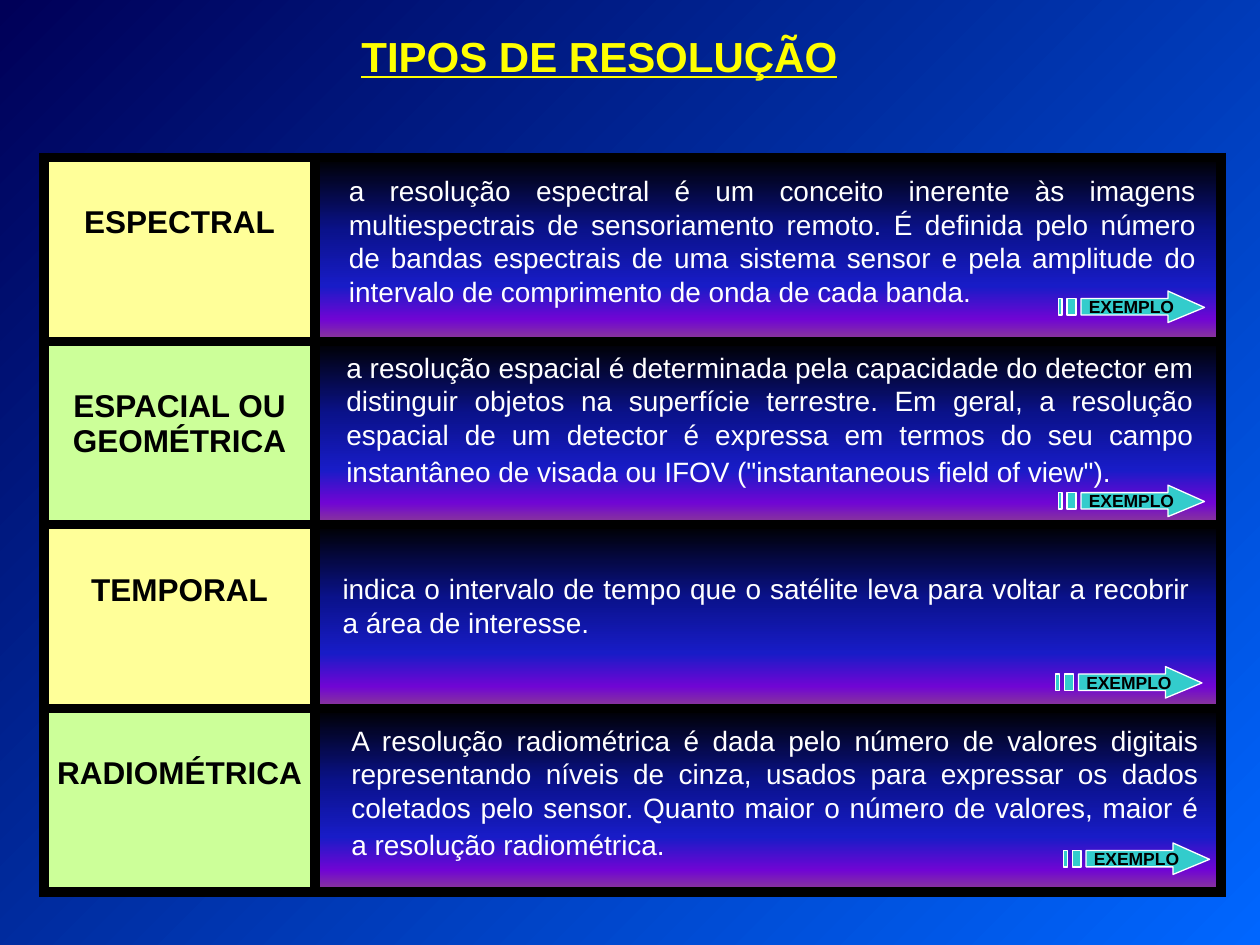
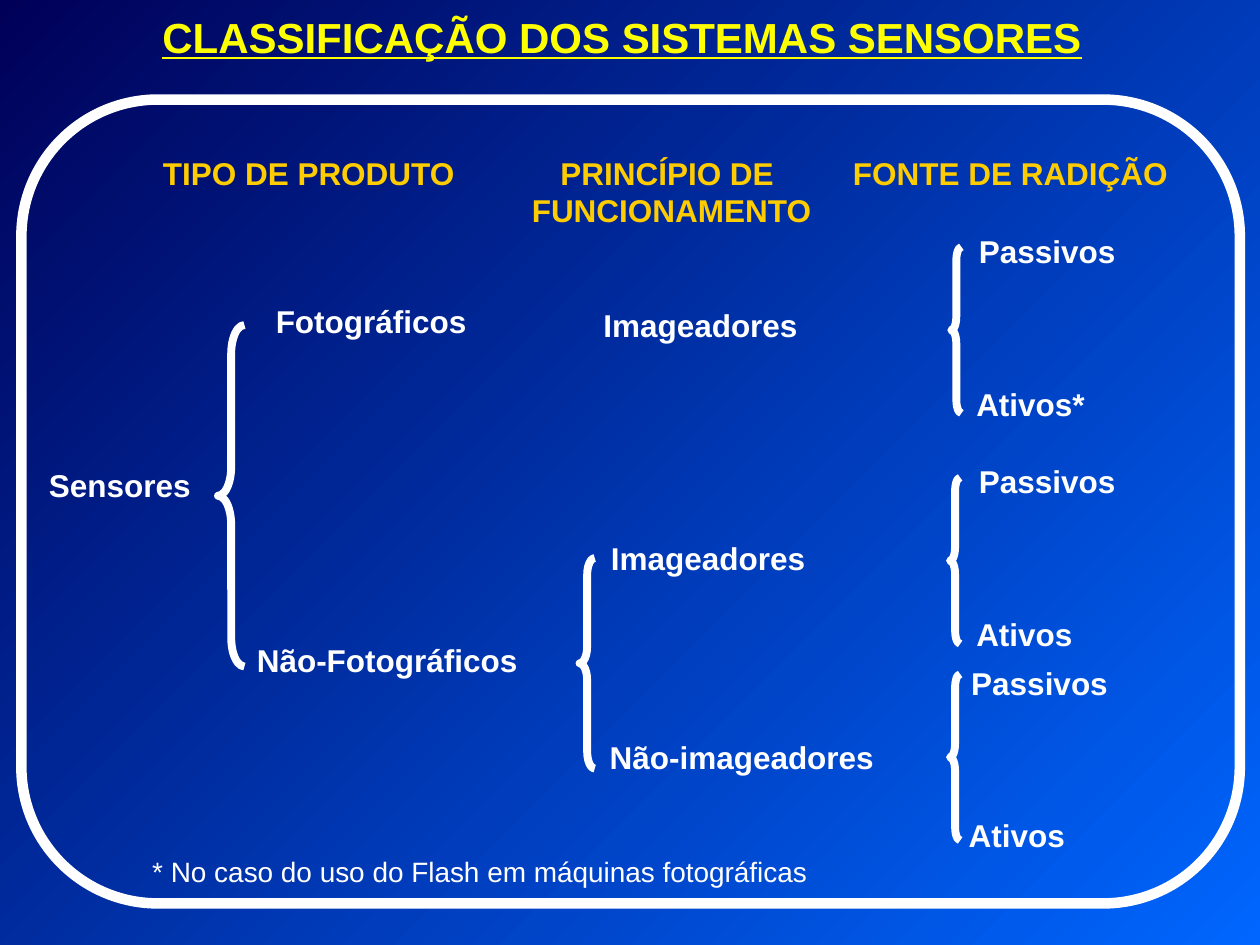
from lxml.etree import SubElement
from pptx import Presentation
from pptx.dml.color import RGBColor
from pptx.enum.shapes import MSO_SHAPE
from pptx.enum.text import MSO_ANCHOR, MSO_AUTO_SIZE, PP_ALIGN
from pptx.oxml.ns import qn
from pptx.util import Inches, Pt

# Shared look
COLORS = {
    "title": "FFFF00", "head": "FFCC00", "white": "FFFFFF", "black": "000000",
    "arrow": "33CCCC", "yellow": "FFFF99", "green": "CCFF99",
}
BACK = [(0, "000058"), (100, "0066FF")]
GLOW = [(0, "000000"), (40, "0A128C"), (70, "181CC7"), (88, "7005D4"), (100, "8C3D91")]
FONT = "Arial"

# Resolution types: label, label fill, text, text position, arrow position, tall last line
TYPES = [
    ("ESPECTRAL", "yellow",
     "a resolução espectral é um conceito inerente às imagens multiespectrais de "
     "sensoriamento remoto. É definida pelo número de bandas espectrais de uma sistema "
     "sensor e pela amplitude do intervalo de comprimento de onda de cada banda.",
     (2.67, 1.33, 1.17), (8.4, 2.31), False),
    ("ESPACIAL OU GEOMÉTRICA", "green",
     "a resolução espacial é determinada pela capacidade do detector em distinguir "
     "objetos na superfície terrestre. Em geral, a resolução espacial de um detector é "
     "expressa em termos do seu campo instantâneo de visada ou IFOV "
     '("instantaneous field of view").',
     (2.65, 2.73, 1.2), (8.4, 3.85), True),
    ("TEMPORAL", "yellow",
     "indica o intervalo de tempo que o satélite leva para voltar a recobrir a área de "
     "interesse.",
     (2.62, 4.49, 0.64), (8.38, 5.29), False),
    ("RADIOMÉTRICA", "green",
     "A resolução radiométrica é dada pelo número de valores digitais representando "
     "níveis de cinza, usados para expressar os dados coletados pelo sensor. Quanto maior "
     "o número de valores, maior é a resolução radiométrica.",
     (2.69, 5.69, 1.2), (8.44, 6.69), True),
]

# Sensor tree: left, top, width
HEADS = [
    ("TIPO DE PRODUTO", 1.19, 1.17, 2.52),
    ("PRINCÍPIO DE\n FUNCIONAMENTO", 4.05, 1.17, 2.49),
    ("FONTE DE RADIÇÃO", 6.67, 1.17, 2.7),
]
NODES = [
    ("Sensores", 0.29, 3.65, 1.33),
    ("Fotográficos", 2.09, 2.35, 1.72),
    ("Não-Fotográficos", 1.94, 5.04, 2.27),
    ("Imageadores", 4.69, 2.38, 1.74),
    ("Imageadores", 4.75, 4.23, 1.74),
    ("Não-imageadores", 4.74, 5.81, 2.3),
    ("Passivos", 7.67, 1.79, 1.32),
    ("Ativos*", 7.65, 3.01, 1.06),
    ("Passivos", 7.67, 3.62, 1.32),
    ("Ativos", 7.65, 4.83, 0.97),
    ("Passivos", 7.61, 5.22, 1.32),
    ("Ativos", 7.59, 6.43, 0.97),
]
# Braces: left, top, width, height, curl
BRACES = [
    (1.73, 2.58, 0.21, 2.71, 1.09),
    (4.6, 4.43, 0.12, 1.67, 1.11),
    (7.55, 1.96, 0.08, 1.32, 1.32),
    (7.54, 3.79, 0.08, 1.32, 1.32),
    (7.54, 5.35, 0.08, 1.32, 1.32),
]


def rgb(name):
    return RGBColor.from_string(COLORS[name])


def blend(fill, root, stops, angle):
    """Fill with a linear gradient; the angle runs clockwise."""
    fill.gradient()
    fill.gradient_angle = 360 - angle
    items = root.find(".//" + qn("a:gsLst"))
    for old in list(items):
        items.remove(old)
    for place, color in stops:
        stop = SubElement(items, qn("a:gs"), pos=str(place * 1000))
        SubElement(stop, qn("a:srgbClr"), val=color)


def style(frame, size, color, bold=False, under=False, align=PP_ALIGN.LEFT):
    for par in frame.paragraphs:
        par.alignment = align
        for run in par.runs:
            font = run.font
            font.name, font.size, font.bold = FONT, Pt(size), bold
            font.underline = under
            font.color.rgb = rgb(color)


def add_text(slide, text, left, top, width, height, size, color, wrap=False, **look):
    box = slide.shapes.add_textbox(Inches(left), Inches(top), Inches(width), Inches(height))
    frame = box.text_frame
    frame.word_wrap = wrap
    frame.auto_size = MSO_AUTO_SIZE.SHAPE_TO_FIT_TEXT
    frame.text = text
    style(frame, size, color, **look)
    return frame


def add_page(deck, title, left, top, width):
    slide = deck.slides.add_slide(deck.slide_layouts[6])
    blend(slide.background.fill, slide.element, BACK, 45)
    add_text(slide, title, left, top, width, 0.5, 24, "title", bold=True, under=True)
    return slide


def add_edges(cell):
    props = cell._tc.get_or_add_tcPr()
    for side in ("lnL", "lnR", "lnT", "lnB"):
        line = SubElement(props, qn("a:" + side), w=str(Pt(6)))
        solid = SubElement(line, qn("a:solidFill"))
        SubElement(solid, qn("a:srgbClr"), val=COLORS["black"])


def add_grid(slide):
    table = slide.shapes.add_table(
        len(TYPES), 2, Inches(0.35), Inches(1.25), Inches(9.34), Inches(5.83)).table
    table.first_row = table.horz_banding = False
    table.columns[0].width, table.columns[1].width = Inches(2.15), Inches(7.19)
    for row, (label, color, *_) in enumerate(TYPES):
        name, body = table.cell(row, 0), table.cell(row, 1)
        add_edges(name)
        add_edges(body)
        name.margin_top = Inches(0.38)
        name.margin_left = name.margin_right = Inches(0.05)
        name.text_frame.text = label
        style(name.text_frame, 18, "black", bold=True, align=PP_ALIGN.CENTER)
        name.fill.solid()
        name.fill.fore_color.rgb = rgb(color)
        blend(body.fill, body._tc, GLOW, 90)


def add_arrow(slide, left, top):
    """Striped arrow: a head with its shaft, then two loose bars."""
    high, low = 0.06, 0.19
    head = [(0.87, 0), (0.87, high), (0.18, high), (0.18, low),
            (0.87, low), (0.87, 0.25), (1.16, 0.13)]
    bars = [[(a, high), (a, low), (b, low), (b, high)] for a, b in ((0.07, 0.14), (0, 0.03))]
    pen = None
    for part in [head] + bars:
        dots = [(Inches(left + x), Inches(top + y)) for x, y in part]
        if pen is None:
            pen = slide.shapes.build_freeform(*dots[0])
        else:
            pen.move_to(*dots[0])
        pen.add_line_segments(dots[1:], close=True)
    shape = pen.convert_to_shape()
    shape.shadow.inherit = False
    shape.fill.solid()
    shape.fill.fore_color.rgb = rgb("arrow")
    shape.line.color.rgb = rgb("white")
    shape.line.width = Pt(0.75)
    frame = shape.text_frame
    frame.word_wrap = False
    frame.vertical_anchor = MSO_ANCHOR.MIDDLE
    frame.text = "EXEMPLO"
    style(frame, 10, "black", bold=True, align=PP_ALIGN.CENTER)


def add_outline(slide, kind, left, top, width, height, weight, bend):
    shape = slide.shapes.add_shape(
        kind, Inches(left), Inches(top), Inches(width), Inches(height))
    shape.adjustments[0] = bend
    shape.shadow.inherit = False
    shape.fill.background()
    shape.line.color.rgb = rgb("white")
    shape.line.width = Pt(weight)


def add_types(deck):
    slide = add_page(deck, "TIPOS DE RESOLUÇÃO", 2.77, 0.19, 3.98)
    add_grid(slide)
    for _, _, text, (left, top, height), spot, tall in TYPES:
        frame = add_text(slide, text, left, top, 6.92, height, 16, "white",
                         wrap=True, align=PP_ALIGN.JUSTIFY)
        if tall:
            tail = frame.paragraphs[0].add_run()
            tail.text = " "
            tail.font.name, tail.font.size = "Lato", Pt(18)
        add_arrow(slide, *spot)


def add_tree(deck):
    slide = add_page(deck, "CLASSIFICAÇÃO DOS SISTEMAS SENSORES", 1.19, 0.04, 7.5)
    add_outline(slide, MSO_SHAPE.ROUNDED_RECTANGLE, 0.17, 0.79, 9.67, 6.38, 6, 0.17)
    for *place, curl in BRACES:
        add_outline(slide, MSO_SHAPE.LEFT_BRACE, *place, 4.5, curl)
    for text, left, top, width in HEADS:
        height = 0.7 if "\n" in text else 0.4
        add_text(slide, text, left, top, width, height, 18, "head",
                 bold=True, align=PP_ALIGN.CENTER)
    for text, left, top, width in NODES:
        add_text(slide, text, left, top, width, 0.4, 18, "white", bold=True)
    add_text(slide, "* No caso do uso do Flash em máquinas fotográficas",
             1.11, 6.73, 5.41, 0.37, 16, "white")


def main():
    deck = Presentation()
    deck.slide_width, deck.slide_height = Inches(10), Inches(7.5)
    add_types(deck)
    add_tree(deck)
    deck.save("out.pptx")


if __name__ == "__main__":
    main()
